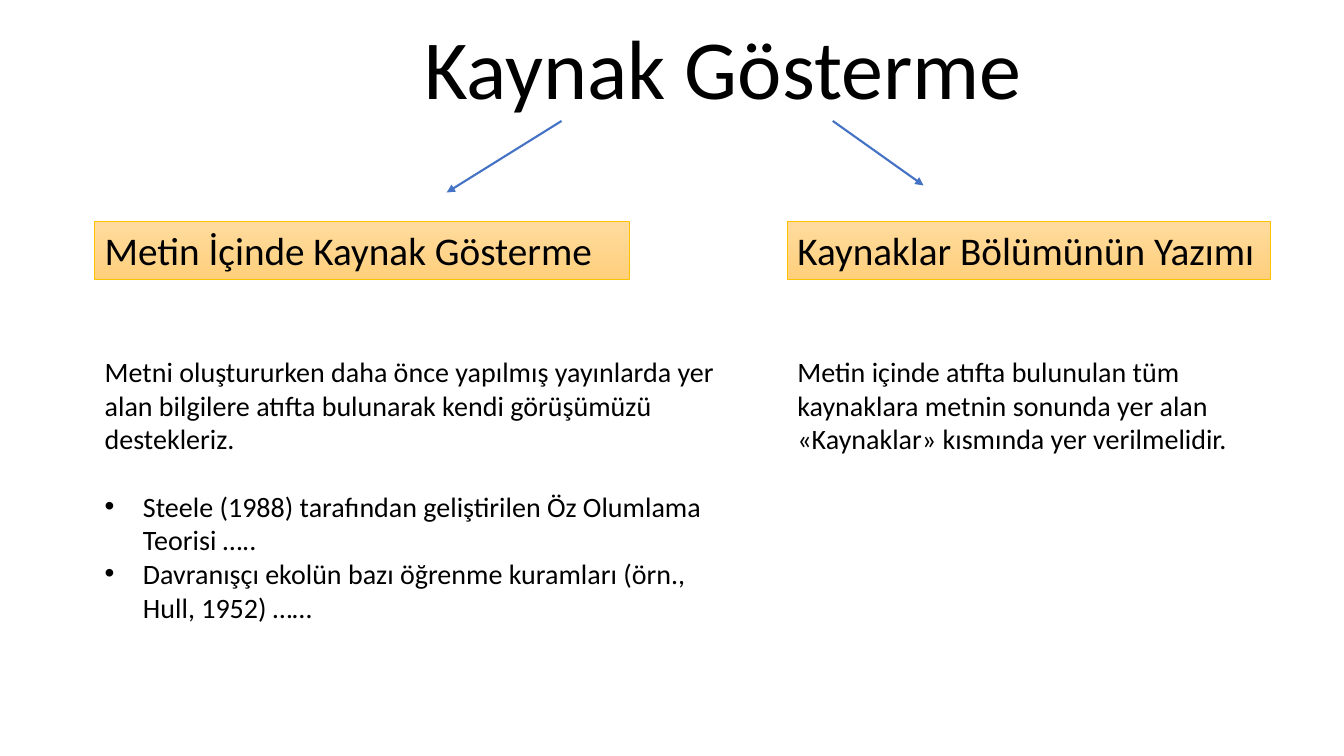
"""Build the slide that introduces the two sides of citing sources."""
from dataclasses import dataclass

from lxml import etree
from pptx import Presentation
from pptx import util as u
from pptx.dml import color
from pptx.enum import shapes, text
from pptx.oxml import ns

COLORS = {"ink": "000000", "arrow": "4472C4", "border": "FFC000",
          "heading_top": "FFDB9E", "heading_bottom": "FFD07C"}
FONT = "Calibri"
BULLET_INDENT = u.Inches(0.38)


@dataclass(frozen=True)
class Topic:
    """One branch of the slide: arrow, heading and explanation."""
    left: float
    heading: str
    heading_width: float
    arrow_start: tuple[float, float]
    arrow_end: tuple[float, float]
    explanation: str
    explanation_width: float
    explanation_height: float
    examples: tuple[str, ...] = ()


TOPICS = (
    Topic(0.94, "Metin İçinde Kaynak Gösterme", 5.3, (5.57, 1.2), (4.43, 1.91),
          "Metni oluştururken daha önce yapılmış yayınlarda yer alan bilgilere "
          "atıfta bulunarak kendi görüşümüzü destekleriz.", 6.43, 3.13,
          ("Steele (1988) tarafından geliştirilen Öz Olumlama Teorisi …..",
           "Davranışçı ekolün bazı öğrenme kuramları (örn., Hull, 1952) ……")),
    Topic(7.81, "Kaynaklar Bölümünün Yazımı", 4.79, (8.26, 1.2), (9.16, 1.84),
          "Metin içinde atıfta bulunulan tüm kaynaklara metnin sonunda yer alan "
          "«Kaynaklar» kısmında yer verilmelidir.", 5.18, 1.45),
)


def rgb(name: str) -> color.RGBColor:
    """Return the named colour."""
    return color.RGBColor.from_string(COLORS[name])


def write(paragraph, content: str, size: float, **layout) -> None:
    """Fill a paragraph with one run and apply its layout values."""
    for attribute, value in layout.items():
        setattr(paragraph, attribute, value)
    run = paragraph.add_run()
    run.text = content
    for attribute, value in {"name": FONT, "size": u.Pt(size)}.items():
        setattr(run.font, attribute, value)
    run.font.color.rgb = rgb("ink")


def add_text_frame(slide, left: float, top: float, width: float, height: float):
    """Add a wrapping text box and return its text frame."""
    frame = slide.shapes.add_textbox(*map(u.Inches, (left, top, width, height))).text_frame
    frame.word_wrap = True
    return frame


def add_bullet(paragraph) -> None:
    """Give a paragraph a hanging round bullet."""
    properties = paragraph._p.get_or_add_pPr()
    properties.set("marL", str(BULLET_INDENT))
    properties.set("indent", str(-BULLET_INDENT))
    etree.SubElement(properties, ns.qn("a:buFont")).set("typeface", "Arial")
    etree.SubElement(properties, ns.qn("a:buChar")).set("char", "•")


def add_heading(slide, topic: Topic) -> None:
    """Draw the gradient heading of a topic."""
    heading = slide.shapes.add_shape(
        shapes.MSO_SHAPE.RECTANGLE,
        *map(u.Inches, (topic.left, 2.2, topic.heading_width, 0.57)))
    heading.shadow.inherit = False
    heading.fill.gradient()
    heading.fill.gradient_angle = 270
    for stop, name in zip(heading.fill.gradient_stops, ("heading_top", "heading_bottom")):
        stop.color.rgb = rgb(name)
    heading.line.color.rgb = rgb("border")
    heading.line.width = u.Pt(0.5)
    frame = heading.text_frame
    frame.vertical_anchor = text.MSO_ANCHOR.TOP
    write(frame.paragraphs[0], topic.heading, 28, alignment=text.PP_ALIGN.LEFT)


def add_arrow(slide, topic: Topic) -> None:
    """Draw the arrow from the title towards a topic."""
    arrow = slide.shapes.add_connector(
        shapes.MSO_CONNECTOR.STRAIGHT,
        *map(u.Inches, topic.arrow_start + topic.arrow_end))
    arrow.line.color.rgb = rgb("arrow")
    arrow.line.width = u.Pt(1.5)
    etree.SubElement(arrow.line._get_or_add_ln(), ns.qn("a:tailEnd")).set("type", "triangle")
    etree.SubElement(arrow._element.spPr, ns.qn("a:effectLst"))


def add_explanation(slide, topic: Topic) -> None:
    """Write the explanation of a topic and its examples."""
    frame = add_text_frame(slide, topic.left, 3.47, topic.explanation_width,
                           topic.explanation_height)
    write(frame.paragraphs[0], topic.explanation, 20)
    for index, example in enumerate(topic.examples):
        paragraph = frame.add_paragraph()
        add_bullet(paragraph)
        write(paragraph, example, 20, space_before=u.Pt(0 if index else 24))


def main() -> None:
    """Build and save the slide."""
    deck = Presentation()
    deck.slide_width, deck.slide_height = u.Inches(13.33), u.Inches(7.5)
    slide = deck.slides.add_slide(deck.slide_layouts[6])
    title = add_text_frame(slide, 1.74, 0, 10.86, 1.22)
    title.vertical_anchor = text.MSO_ANCHOR.BOTTOM
    write(title.paragraphs[0], "Kaynak Gösterme", 60,
          alignment=text.PP_ALIGN.CENTER, line_spacing=0.9)
    for draw in (add_heading, add_arrow, add_explanation):
        for topic in TOPICS:
            draw(slide, topic)
    deck.save("out.pptx")


if __name__ == "__main__":
    main()
